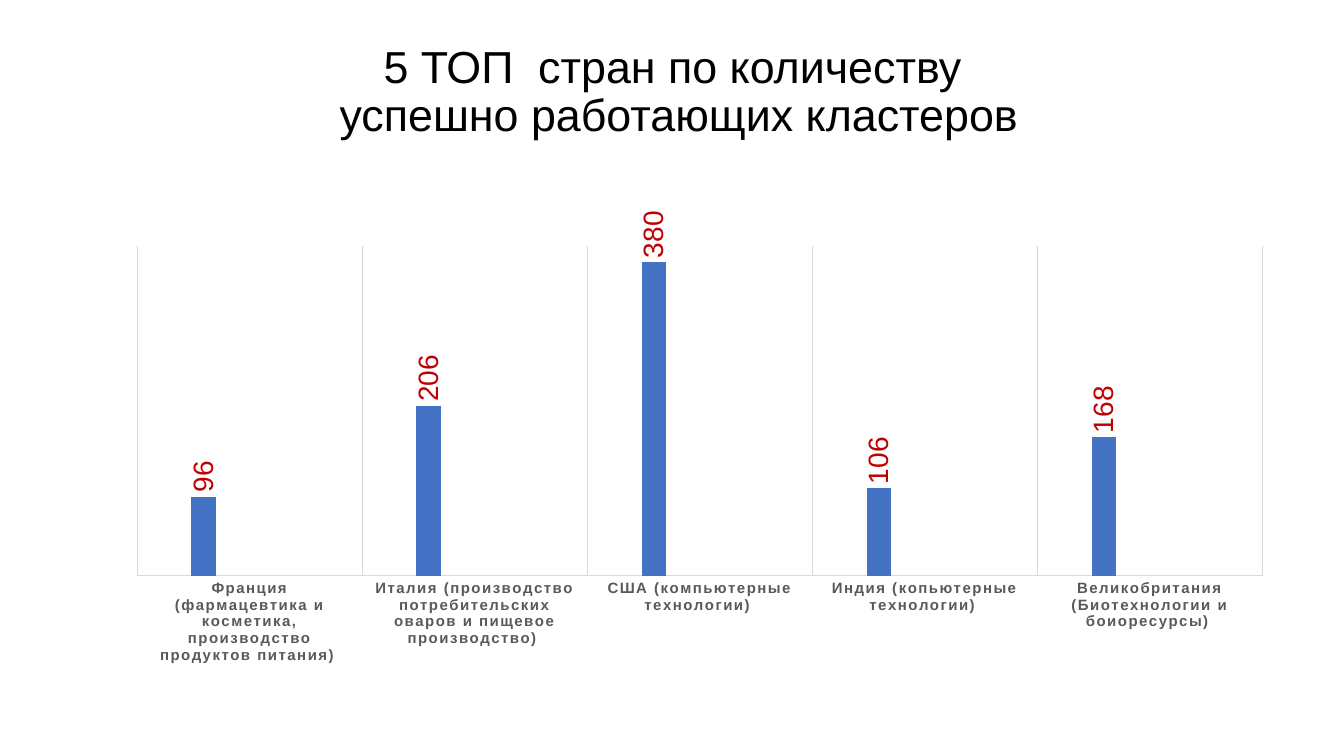
from pptx import Presentation
from pptx.chart.data import CategoryChartData as ChartData
from pptx.dml.color import RGBColor
from pptx.enum.chart import XL_CHART_TYPE as ChartType
from pptx.enum.chart import XL_LABEL_POSITION as LabelPosition
from pptx.enum.chart import XL_TICK_MARK as TickMark
from pptx.enum.text import MSO_ANCHOR as Anchor
from pptx.enum.text import MSO_AUTO_SIZE as AutoSize
from pptx.enum.text import PP_ALIGN as Align
from pptx.oxml import parse_xml
from pptx.oxml.ns import nsdecls
from pptx.util import Cm, Pt

CLUSTERS = {
    "Франция (фармацевтика и косметика, производство продуктов питания) ": 96,
    "Италия (производство потребительских оваров и пищевое производство) ": 206,
    "США (компьютерные технологии) ": 380,
    "Индия (копьютерные технологии) ": 106,
    "Великобритания (Биотехнологии и боиоресурсы) ": 168,
}
PLOT_AREA = {"x": 0.046, "y": 0.123, "w": 0.943, "h": 0.625}


def color(value):
    return RGBColor.from_string(value)


def format_font(font, size, fill, name="Arial", bold=False):
    font.size = Pt(size)
    font.name = name
    font.bold = bold
    font.color.rgb = color(fill)


def write(para, text, **style):
    for number, line in enumerate(text.split("\n")):
        if number:
            para.add_line_break()
        span = para.add_run()
        span.text = line
        format_font(span.font, **style)


class SlideBuilder:
    bars = ("4472C4", "ED7D31", "A5A5A5")
    rule = "D9D9D9"
    small = 10.64

    def __init__(self, deck):
        self.page = deck.slides.add_slide(deck.slide_layouts[5])

    def title(self, text, left, top, width, height):
        box = self.page.shapes.title
        box.left, box.top = Cm(left), Cm(top)
        box.width, box.height = Cm(width), Cm(height)
        frame = box.text_frame
        frame.word_wrap = True
        frame.auto_size = AutoSize.TEXT_TO_FIT_SHAPE
        frame.vertical_anchor = Anchor.MIDDLE
        para = frame.paragraphs[0]
        para.alignment = Align.CENTER
        para.line_spacing = 0.9
        write(para, text, size=32, fill="000000")

    def column_chart(self, values, left, top, width, height):
        data = ChartData()
        data.categories = list(values)
        data.add_series("Series 1", list(values.values()))
        for number in (2, 3):
            data.add_series(f"Series {number}", [None] * len(values))
        chart = self.page.shapes.add_chart(
            ChartType.COLUMN_CLUSTERED, Cm(left), Cm(top), Cm(width), Cm(height), data
        ).chart
        chart.has_title = False
        chart.has_legend = False
        format_font(chart.font, 10, "000000", "Calibri")
        plot = chart.plots[0]
        plot.gap_width = 444
        plot.overlap = -90
        plot.vary_by_categories = False
        for series, fill in zip(plot.series, self.bars):
            series.format.fill.solid()
            series.format.fill.fore_color.rgb = color(fill)
            series.invert_if_negative = False
        first, *others = plot.series
        self.value_labels(first, 20, "C00000", "Arial")
        for series in others:
            self.value_labels(series, self.small, "808080", "Calibri")
        self.axes(chart)
        self.plot_area(chart)

    def value_labels(self, series, size, fill, name):
        labels = series.data_labels
        labels.show_value = True
        labels.position = LabelPosition.OUTSIDE_END
        format_font(labels.font, size, fill, name)
        body = labels._element.xpath("c:txPr/a:bodyPr")[0]
        body.set("rot", "-5400000")
        body.set("vert", "horz")

    def axes(self, chart):
        countries = chart.category_axis
        countries.major_tick_mark = TickMark.NONE
        countries.has_major_gridlines = True
        for line in (countries.format.line, countries.major_gridlines.format.line):
            line.color.rgb = color(self.rule)
            line.width = Pt(0.75)
        format_font(countries.tick_labels.font, self.small, "595959", bold=True)
        chart.element.xpath(".//c:catAx/c:txPr//a:defRPr")[0].set("spc", "120")
        counts = chart.value_axis
        counts.minimum_scale = 0
        counts.maximum_scale = 400
        counts.has_major_gridlines = False
        counts.visible = False

    def plot_area(self, chart):
        area = chart.element.xpath(".//c:plotArea")[0]
        for layout in area.xpath("c:layout"):
            area.remove(layout)
        modes = '<c:xMode val="edge"/><c:yMode val="edge"/>'
        sizes = "".join(f'<c:{key} val="{part}"/>' for key, part in PLOT_AREA.items())
        area.insert(0, parse_xml(
            f'<c:layout {nsdecls("c")}><c:manualLayout><c:layoutTarget val="inner"/>'
            f"{modes}{sizes}</c:manualLayout></c:layout>"
        ))


def main():
    deck = Presentation()
    deck.slide_width, deck.slide_height = Cm(33.87), Cm(19.05)
    slide = SlideBuilder(deck)
    slide.title(
        "5 ТОП  стран по количеству \nуспешно работающих кластеров",
        0.91, 0.91, 32.41, 2.87,
    )
    slide.column_chart(CLUSTERS, 2.08, 4.56, 30.07, 13.3)
    deck.save("out.pptx")


if __name__ == "__main__":
    main()
